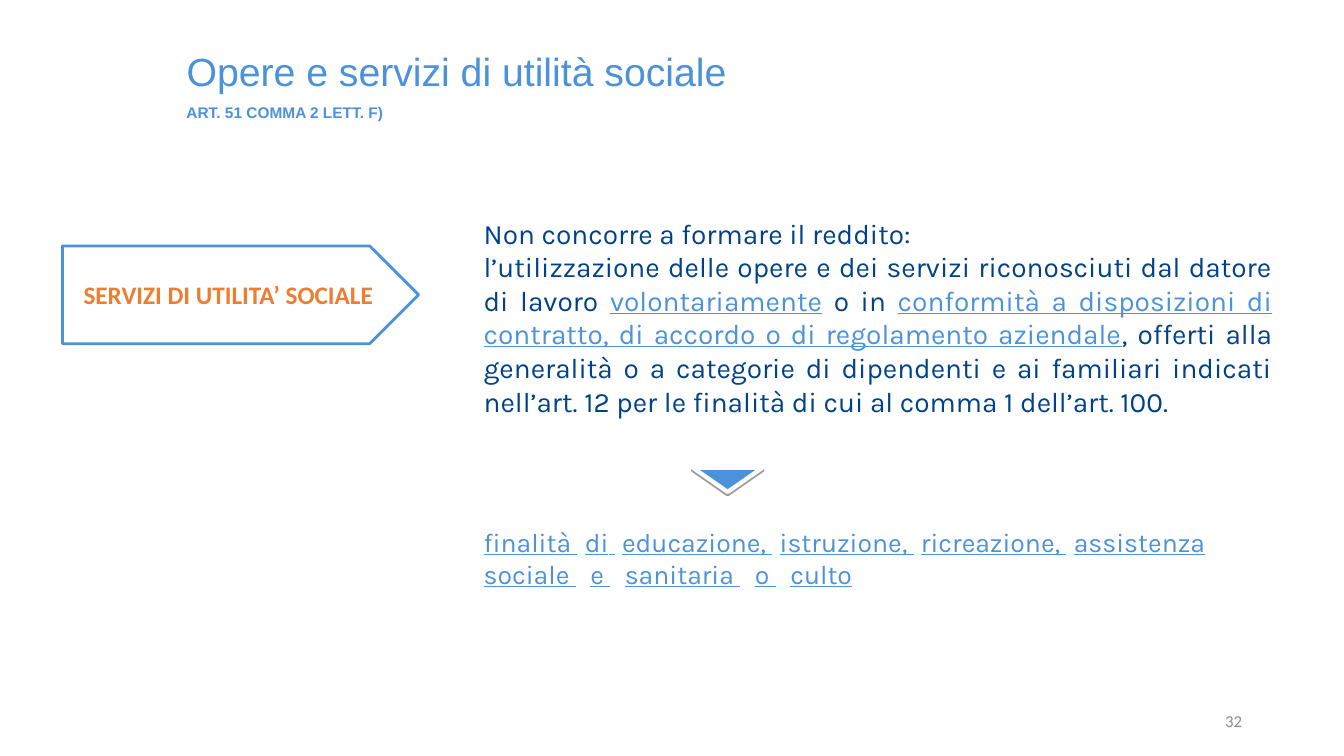
from dataclasses import dataclass
from typing import Optional

from lxml import etree
from pptx import Presentation
from pptx.dml.color import RGBColor
from pptx.enum.shapes import MSO_SHAPE
from pptx.enum.text import MSO_ANCHOR, MSO_AUTO_SIZE, PP_ALIGN
from pptx.oxml.ns import qn
from pptx.util import Inches, Pt

SKY = RGBColor(0x4B, 0x92, 0xDB)
NAVY = RGBColor(0x00, 0x42, 0x88)
RUST = RGBColor(0xED, 0x7D, 0x31)
GREY = RGBColor(0x8C, 0x8C, 0x8C)
WHITE = RGBColor(0xFF, 0xFF, 0xFF)

RECT, PLATE, WEDGE = MSO_SHAPE.RECTANGLE, MSO_SHAPE.PENTAGON, MSO_SHAPE.ISOSCELES_TRIANGLE
LEFT, MID, RIGHT, FULL = PP_ALIGN.LEFT, PP_ALIGN.CENTER, PP_ALIGN.RIGHT, PP_ALIGN.JUSTIFY
TOP, CENTRE = MSO_ANCHOR.TOP, MSO_ANCHOR.MIDDLE

WIDE, HIGH = Inches(13.33), Inches(7.5)


@dataclass
class Run:
    text: str
    color: RGBColor
    line: bool = False
    gap: float = 0  # extra points after each letter


@dataclass
class Block:
    area: tuple[float, float, float, float]  # left, top, width, height in % of slide
    paras: list[list[Run]]
    font: str
    size: float
    align: PP_ALIGN = LEFT
    anchor: MSO_ANCHOR = CENTRE
    bold: bool = False
    space: Optional[float] = None
    wrap: bool = True
    form: Optional[MSO_SHAPE] = None
    edge: Optional[RGBColor] = None


def scale(area: tuple) -> list[int]:
    return [int(share * full / 100) for share, full in zip(area, (WIDE, HIGH) * 2)]


def apply(item, values: dict) -> None:
    for name, value in values.items():
        setattr(item, name, value)


def spread(text: str, gap: float) -> list[Run]:
    """Underlined words with widened gaps between them."""
    runs = []
    for word in text.split():
        runs += [Run(word, SKY, True), Run(" ", SKY, True, gap)]
    return runs


def write(shape, block: Block) -> None:
    frame = shape.text_frame
    apply(frame, {"auto_size": MSO_AUTO_SIZE.NONE, "word_wrap": block.wrap,
                  "vertical_anchor": block.anchor})
    for i, runs in enumerate(block.paras):
        para = frame.add_paragraph() if i else frame.paragraphs[0]
        apply(para, {"alignment": block.align, "line_spacing": block.space})
        for run in runs:
            part = para.add_run()
            part.text = run.text
            apply(part.font, {"name": block.font, "size": Pt(block.size),
                              "bold": block.bold, "underline": run.line})
            part.font.color.rgb = run.color
            if run.gap:
                part.font._element.set("spc", str(int(run.gap * 100)))


def paint(slide, form: MSO_SHAPE, area: tuple, fill: RGBColor,
          edge: Optional[RGBColor], width: float):
    shape = slide.shapes.add_shape(form, *scale(area))
    shape.shadow.inherit = False
    shape.fill.solid()
    shape.fill.fore_color.rgb = fill
    if edge is None:
        shape.line.fill.background()
    else:
        shape.line.color.rgb = edge
        shape.line.width = Pt(width)
    return shape


def draw(slide, block: Block) -> None:
    if block.form is None:
        shape = slide.shapes.add_textbox(*scale(block.area))
    else:
        shape = paint(slide, block.form, block.area, WHITE, block.edge, 2)
    write(shape, block)


def shade(shape) -> None:
    """Sharp shadow just below the shape."""
    glow = etree.SubElement(shape._element.spPr.find(qn("a:effectLst")), qn("a:outerShdw"),
                            blurRad="0", dist=str(Pt(1.6)), dir="5400000", rotWithShape="0")
    tint = etree.SubElement(glow, qn("a:srgbClr"), val="000000")
    etree.SubElement(tint, qn("a:alpha"), val="38000")


HEAD = Block((13.13, 5.6, 42.16, 7.6), [[Run("Opere e servizi di utilità sociale", SKY)]],
             "Arial", 28, anchor=TOP, wrap=False)

BLOCKS = [
    # Rule on income
    Block((35.25, 18.8, 60.15, 46.27), [
        [Run("Non concorre a formare il reddito:", NAVY)],
        [Run("l’utilizzazione delle opere e dei servizi riconosciuti dal datore di lavoro ", NAVY),
         Run("volontariamente", SKY, True),
         Run(" o in ", NAVY),
         Run("conformità a disposizioni di contratto, di accordo o di regolamento aziendale",
             SKY, True),
         Run(", offerti alla generalità o a categorie di dipendenti e ai familiari indicati "
             "nell’art. 12 per le finalità di cui al comma 1 dell’art. 100.", NAVY)],
    ], "Karla", 20, FULL, form=RECT),
    # Topic tag
    Block((4.65, 32.53, 26.5, 12.93), [[Run("SERVIZI DI UTILITA’ SOCIALE", RUST)]],
          "Calibri", 18, MID, bold=True, form=PLATE, edge=SKY),
    # Article of law
    Block((13.13, 11.6, 29.86, 5.2), [[Run("ART. 51 COMMA 2 LETT. F)", SKY)]],
          "Arial", 11, FULL, bold=True, space=1.5),
    # Aims
    Block((35.25, 68.93, 59.05, 9.87), [
        spread("finalità di educazione, istruzione, ricreazione, assistenza", 5.2)
        + spread("sociale e sanitaria o culto", 10.4)[:-1],
    ], "Karla", 19, anchor=TOP),
    # Page number
    Block((70.67, 92.67, 22.5, 5.33), [[Run("32", GREY)]], "Calibri", 12, RIGHT),
]


def main() -> None:
    deck = Presentation()
    apply(deck, {"slide_width": WIDE, "slide_height": HIGH})
    slide = deck.slides.add_slide(deck.slide_layouts[5])

    # Title
    title = slide.shapes.title
    apply(title, dict(zip(("left", "top", "width", "height"), scale(HEAD.area))))
    write(title, HEAD)

    for block in BLOCKS:
        draw(slide, block)

    # Pointer from rule to aims
    wedge = paint(slide, WEDGE, (51.55, 61.87, 5.18, 3.2), SKY, WHITE, 3)
    wedge.rotation = 180
    shade(wedge)

    deck.save("out.pptx")


if __name__ == "__main__":
    main()
